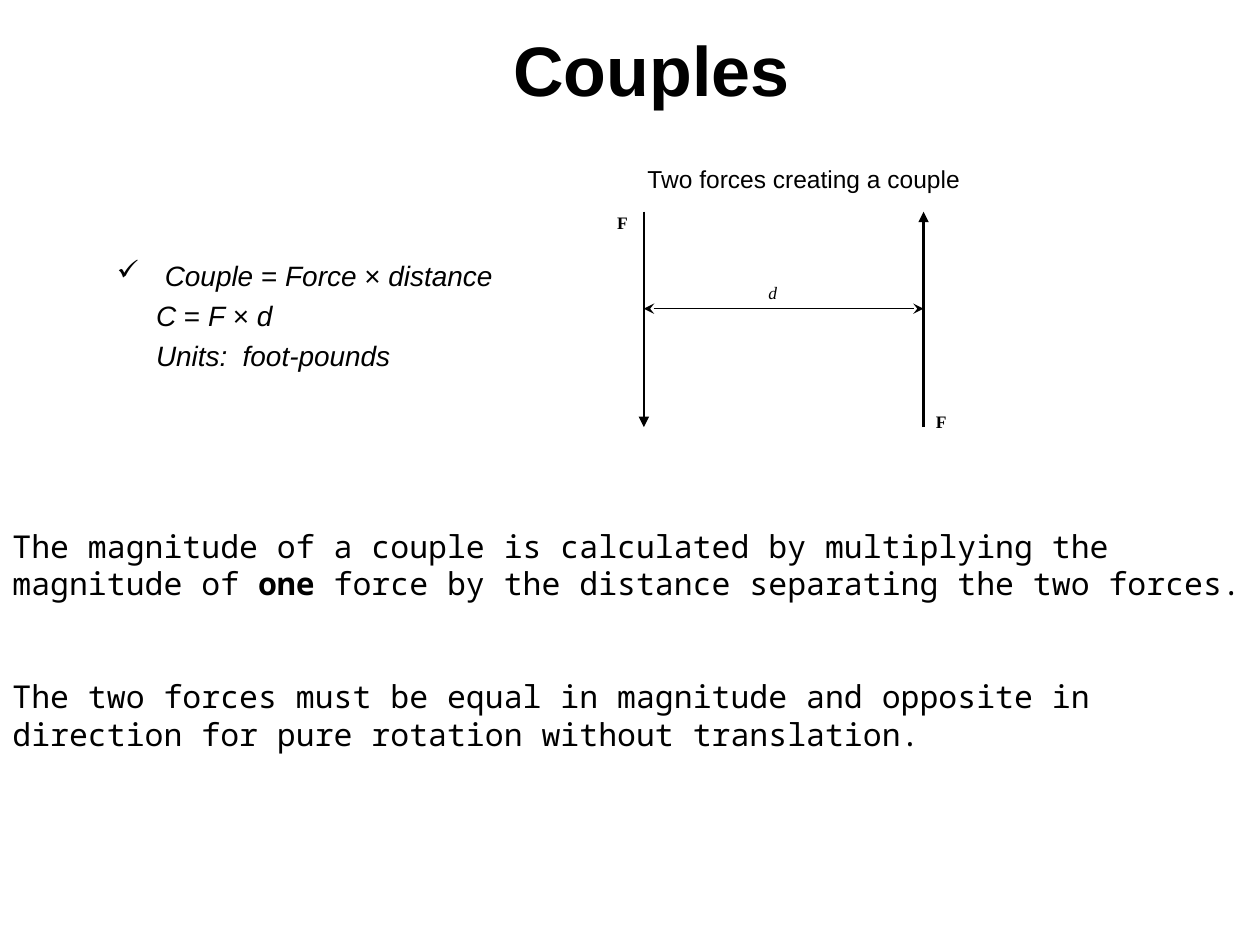
from dataclasses import dataclass

from lxml.etree import SubElement
from pptx import Presentation
from pptx.dml.color import RGBColor
from pptx.enum.shapes import MSO_CONNECTOR as Connector
from pptx.enum.text import MSO_ANCHOR as Anchor, PP_ALIGN as Align
from pptx.oxml.ns import qn
from pptx.util import Inches, Pt


@dataclass(frozen=True)
class Theme:
    ink: RGBColor = RGBColor(0, 0, 0)
    paper: RGBColor = RGBColor(255, 255, 255)
    sans: str = "Arial"
    serif: str = "Times New Roman"
    mono: str = "Noto Sans Mono"
    title: int = 40
    body: int = 18
    formula: int = 16
    caption: int = 14
    label: int = 10


class SlideBuilder:
    """Places elements on a grid of 100 columns by 75 rows."""

    def __init__(self, presentation, theme):
        self.theme = theme
        self.column = presentation.slide_width / 100
        self.row = presentation.slide_height / 75
        self.slide = presentation.slides.add_slide(presentation.slide_layouts[5])
        self.slide.background.fill.solid()
        self.slide.background.fill.fore_color.rgb = theme.paper

    def place(self, *cells):
        units = (self.column, self.row) * 2
        return [round(cell * unit) for cell, unit in zip(cells, units)]

    def add_runs(self, paragraph, parts, font, size):
        """Each part is a text and its style: "b", "i" or ""."""
        for text, style in parts:
            run = paragraph.add_run()
            run.text = text
            run.font.name, run.font.size = font, Pt(size)
            run.font.bold, run.font.italic = "b" in style, "i" in style
            run.font.color.rgb = self.theme.ink

    def title(self, text, cells):
        shape = self.slide.shapes.title
        shape.left, shape.top, shape.width, shape.height = self.place(*cells)
        shape.text_frame.vertical_anchor = Anchor.MIDDLE
        paragraph = shape.text_frame.paragraphs[0]
        paragraph.alignment = Align.CENTER
        paragraph.line_spacing = 0.7
        self.add_runs(paragraph, [(text, "b")], self.theme.sans, self.theme.title)

    def text(self, paragraphs, cells, font, size, gap=0):
        """Adds a text box; gap is the space in points between paragraphs."""
        frame = self.slide.shapes.add_textbox(*self.place(*cells)).text_frame
        frame.word_wrap = True
        for index, parts in enumerate(paragraphs):
            paragraph = frame.add_paragraph() if index else frame.paragraphs[0]
            paragraph.space_before = Pt(gap if index else 0)
            self.add_runs(paragraph, parts, font, size)
        return frame

    def indent(self, paragraph, left, bullet=None):
        """Indents a paragraph, hanging it when it has a bullet."""
        properties = paragraph._p.get_or_add_pPr()
        properties.set("marL", str(Inches(left)))
        properties.set("indent", str(-Inches(left) if bullet else 0))
        if bullet:
            SubElement(properties, qn("a:buChar")).set("char", bullet)

    def arrow(self, start, end, width, head=None, tail=None):
        line = self.slide.shapes.add_connector(
            Connector.STRAIGHT, *self.place(*start, *end))
        line.line.color.rgb = self.theme.ink
        line.line.width = Pt(width)
        for tag, kind in (("a:headEnd", head), ("a:tailEnd", tail)):
            if kind:
                SubElement(line.line._get_or_add_ln(), qn(tag)).set("type", kind)
        SubElement(line._element.spPr, qn("a:effectLst"))


def main():
    presentation = Presentation()
    presentation.slide_width, presentation.slide_height = Inches(10), Inches(7.5)
    theme = Theme()
    builder = SlideBuilder(presentation, theme)
    builder.title("Couples", (1.7, 0, 100, 12.5))

    # Diagram: two opposite forces and the distance between them
    left, right, top, bottom, middle = 51.1, 73.3, 16.8, 33.9, 24.5
    builder.arrow((left, top), (left, bottom), 1.5, tail="triangle")
    builder.arrow((right, bottom), (right, top), 1.5, tail="triangle")
    builder.arrow((left, middle), (right, middle), 0.75, "stealth", "stealth")
    labels = (("F", "b", 48, 16.3), ("F", "b", right, 32.1), ("d", "i", 60, 21.9))
    for text, style, column, row in labels:
        builder.text([[(text, style)]], (column, row, 8.5, 5.4),
                     theme.serif, theme.label)
    builder.text([[("Two forces creating a couple", "")]], (50.4, 12.5, 28.5, 3.3),
                 theme.sans, theme.caption)

    # Formula
    formula = builder.text(
        [[("Couple", "i"), (" = ", ""), ("Force ", "i"), ("× ", ""), ("distance", "i")],
         [("C", "i"), (" = ", ""), ("F", "i"), (" × ", ""), ("d", "i")],
         [("Units:  foot-pounds", "i")]],
        (8.3, 20, 34.2, 10.1), theme.sans, theme.formula, gap=3.8)
    first, *others = formula.paragraphs
    builder.indent(first, 0.38, "✓")
    for paragraph in others:
        builder.indent(paragraph, 0.31)

    # Explanation
    builder.text(
        [[("The magnitude of a couple is calculated by multiplying the magnitude of ", ""),
          ("one", "b"), (" force by the distance separating the two forces.", "")],
         [("The two forces must be equal in magnitude and opposite in direction "
           "for pure rotation without translation.", "")]],
        (0, 41.3, 100.4, 20), theme.mono, theme.body, gap=43)

    presentation.save("out.pptx")


if __name__ == "__main__":
    main()
